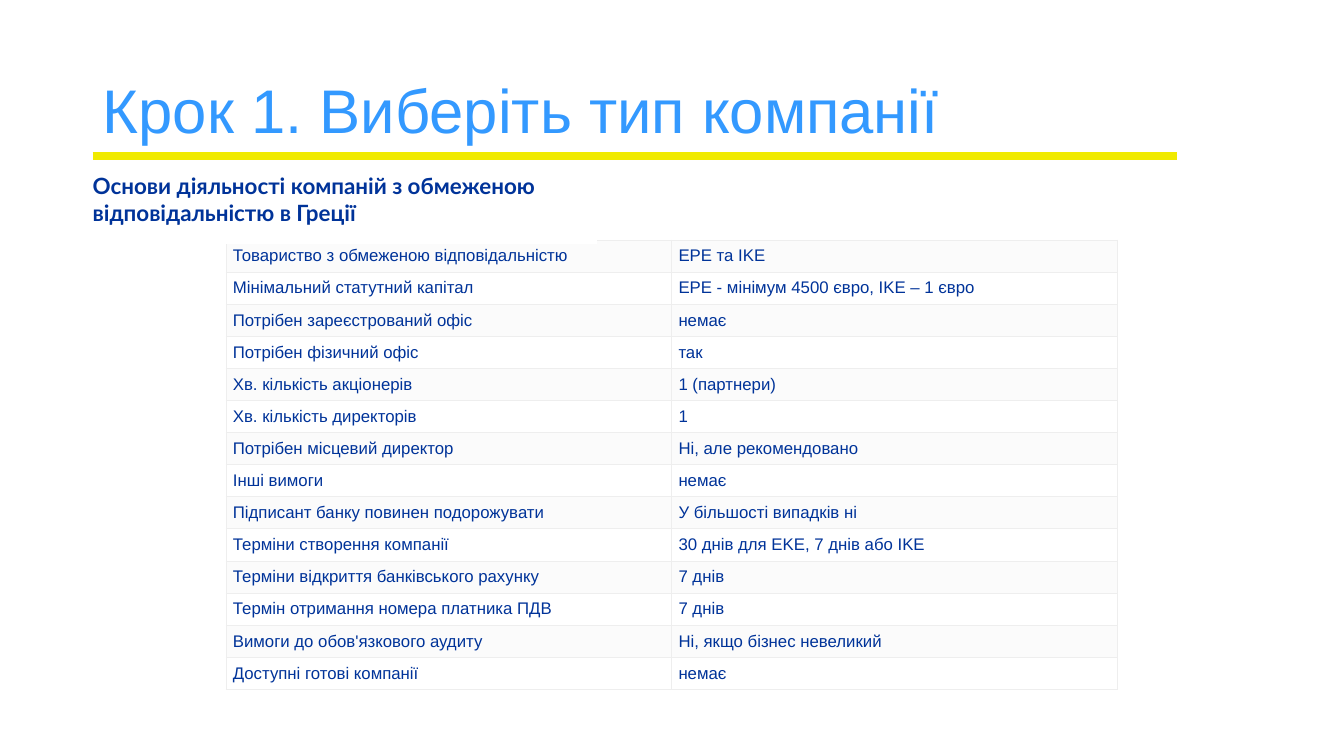
from lxml import etree
from pptx import Presentation
from pptx import util as u
from pptx.dml.color import RGBColor
from pptx.enum import shapes, text
from pptx.oxml import ns

COLORS = {
    "title": "3399FF",
    "text": "003399",
    "rule": "F0EA00",
    "band": "FBFBFB",
    "border": "EEEEEE",
    "paper": "FFFFFF",
}
LEFT = u.Inches(0.92)
TABLE_HEIGHT = u.Inches(4.46)
COLUMN_WIDTH = u.Inches(4.42)
COMPANY_FACTS = [
    ("Товариство з обмеженою відповідальністю", "EPE та IKE"),
    ("Мінімальний статутний капітал", "EPE - мінімум 4500 євро, IKE – 1 євро"),
    ("Потрібен зареєстрований офіс", "немає"),
    ("Потрібен фізичний офіс", "так"),
    ("Хв. кількість акціонерів", "1 (партнери)"),
    ("Хв. кількість директорів", "1"),
    ("Потрібен місцевий директор", "Ні, але рекомендовано"),
    ("Інші вимоги", "немає"),
    ("Підписант банку повинен подорожувати", "У більшості випадків ні"),
    ("Терміни створення компанії", "30 днів для EKE, 7 днів або IKE"),
    ("Терміни відкриття банківського рахунку", "7 днів"),
    ("Термін отримання номера платника ПДВ", "7 днів"),
    ("Вимоги до обов'язкового аудиту", "Ні, якщо бізнес невеликий"),
    ("Доступні готові компанії", "немає"),
]


def color(name):
    return RGBColor.from_string(COLORS[name])


def style(para, size, font, color_name, bold=False):
    para.alignment = text.PP_ALIGN.LEFT
    para.font.size = u.Pt(size)
    para.font.name = font
    para.font.bold = bold
    para.font.color.rgb = color(color_name)


def add_title(page, words):
    title = page.shapes.title
    title.left, title.top = LEFT, u.Inches(0.4)
    title.width, title.height = u.Inches(11.5), u.Inches(1.45)
    frame = title.text_frame
    frame.text = words
    frame.vertical_anchor = text.MSO_ANCHOR.MIDDLE
    frame.paragraphs[0].line_spacing = 0.9
    style(frame.paragraphs[0], 44, "Arial", "title")


def add_rule(page):
    y = u.Inches(1.55)
    rule = page.shapes.add_connector(
        shapes.MSO_CONNECTOR.STRAIGHT, LEFT, y, u.Inches(11.67), y)
    rule.line.width = u.Pt(6)
    rule.line.color.rgb = color("rule")
    etree.SubElement(rule.element.spPr, ns.qn("a:effectLst"))


def add_borders(cell):
    properties = cell._tc.get_or_add_tcPr()
    for side in ("lnL", "lnR", "lnT", "lnB"):
        line = etree.SubElement(
            properties, ns.qn(f"a:{side}"), w=str(u.Pt(0.6)))
        fill = etree.SubElement(line, ns.qn("a:solidFill"))
        etree.SubElement(fill, ns.qn("a:srgbClr"), val=COLORS["border"])


def fill_cell(cell, words, banded):
    cell.text = words
    cell.vertical_anchor = text.MSO_ANCHOR.MIDDLE
    cell.margin_left = cell.margin_right = u.Inches(0.07)
    cell.margin_top = cell.margin_bottom = u.Inches(0.06)
    style(cell.text_frame.paragraphs[0], 12, "Arial", "text")
    add_borders(cell)
    if banded:
        cell.fill.solid()
        cell.fill.fore_color.rgb = color("band")
    else:
        cell.fill.background()


def add_facts_table(page, facts):
    table = page.shapes.add_table(
        len(facts), 2, u.Inches(2.24), u.Inches(2.38),
        2 * COLUMN_WIDTH, TABLE_HEIGHT).table
    table.first_row = table.horz_banding = False
    for row, fact in enumerate(facts):
        for column, words in enumerate(fact):
            fill_cell(table.cell(row, column), words, row % 2 == 0)


def add_subtitle(page, words):
    """Add the heading on a white panel that overlaps the table's top edge."""
    panel = page.shapes.add_shape(
        shapes.MSO_SHAPE.RECTANGLE, LEFT, u.Inches(1.71),
        u.Inches(5), u.Inches(0.71))
    panel.shadow.inherit = False
    panel.fill.solid()
    panel.fill.fore_color.rgb = color("paper")
    panel.line.fill.background()
    frame = panel.text_frame
    frame.word_wrap = True
    frame.vertical_anchor = text.MSO_ANCHOR.TOP
    frame.margin_left = frame.margin_right = 0
    frame.margin_top = frame.margin_bottom = 0
    frame.text = words
    style(frame.paragraphs[0], 16, "Lato", "text", bold=True)


def main():
    deck = Presentation()
    deck.slide_width, deck.slide_height = u.Inches(13.33), u.Inches(7.5)
    page = deck.slides.add_slide(deck.slide_layouts[0])
    subtitle = page.placeholders[1].element
    subtitle.getparent().remove(subtitle)
    add_rule(page)
    add_title(page, "Крок 1. Виберіть тип компанії")
    add_facts_table(page, COMPANY_FACTS)
    add_subtitle(
        page, "Основи діяльності компаній з обмеженою відповідальністю в Греції")
    deck.save("out.pptx")


if __name__ == "__main__":
    main()
